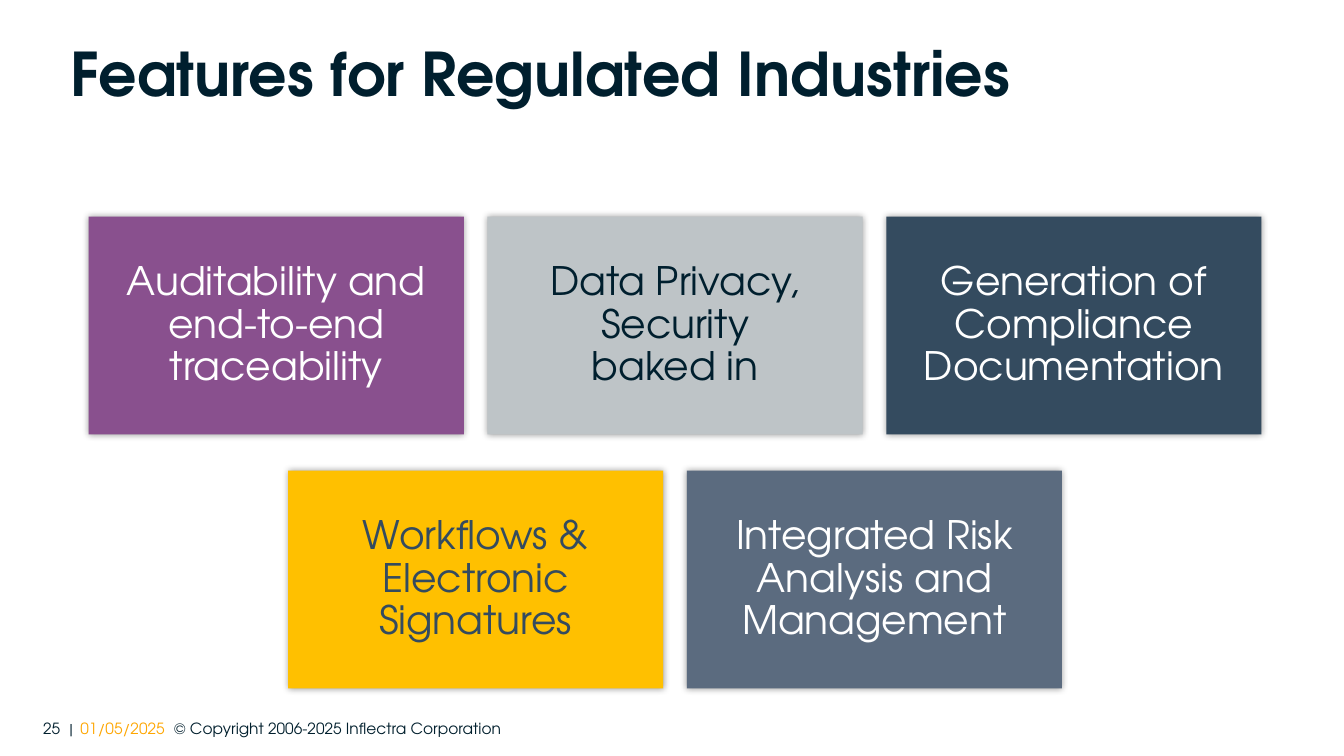
from lxml.etree import SubElement
from pptx import Presentation
from pptx.dml.color import RGBColor
from pptx.enum.shapes import MSO_SHAPE
from pptx.enum.text import MSO_ANCHOR, PP_ALIGN
from pptx.oxml.ns import qn
from pptx.util import Inches, Pt

FONT = "TeX Gyre Adventor"
TITLE = "Features for Regulated Industries"
FOOTER = [
    ("25\t|\t", "001F2D"),
    ("01/05/2025", "FEA601"),
    ("\t© Copyright 2006-2025 Inflectra Corporation", "001F2D"),
]
FOOTER_TABS = [0.26, 0.37, 1.3]
FEATURE_ROWS = [
    [
        ("Auditability and end-to-end traceability", "89508E", "FFFFFF"),
        ("Data Privacy, Security\vbaked in", "BEC4C7", "001F2E"),
        ("Generation of Compliance Documentation", "344B5F", "FFFFFF"),
    ],
    [
        ("Workflows & Electronic Signatures", "FFC000", "344B5F"),
        ("Integrated Risk Analysis and Management", "5B6B7F", "FFFFFF"),
    ],
]
CARD_WIDTH, CARD_HEIGHT = 3.72, 2.16
COLUMN_GAP, ROW_GAP = 0.235, 0.36
GRID_CENTER, GRID_TOP = 6.695, 2.15


def color(value):
    return RGBColor.from_string(value)


def style_run(run, size, value, bold=False):
    run.font.name = FONT
    run.font.size = Pt(size)
    run.font.bold = bold
    run.font.color.rgb = color(value)


def add_shadow(shape):
    shape.shadow.inherit = False
    effects = shape._element.spPr.find(qn("a:effectLst"))
    outer = SubElement(effects, qn("a:outerShdw"), blurRad=str(Pt(5)),
                       dist="0", dir="0", algn="ctr", rotWithShape="0")
    black = SubElement(outer, qn("a:srgbClr"), val="000000")
    SubElement(black, qn("a:alpha"), val="40000")


def add_title(slide):
    title = slide.shapes.add_textbox(Inches(0.6), Inches(0.34), Inches(11.5), Inches(0.84))
    frame = title.text_frame
    frame.word_wrap = True
    frame.vertical_anchor = MSO_ANCHOR.MIDDLE
    frame.text = TITLE
    frame.paragraphs[0].line_spacing = 0.9
    style_run(frame.paragraphs[0].runs[0], 43, "001F2E", True)


def add_footer(slide):
    footer = slide.shapes.add_textbox(Inches(0.33), Inches(7.08), Inches(6.67), Inches(0.29))
    footer.text_frame.word_wrap = True
    line = footer.text_frame.paragraphs[0]
    stops = SubElement(line._p.get_or_add_pPr(), qn("a:tabLst"))
    for position in FOOTER_TABS:
        SubElement(stops, qn("a:tab"), pos=str(Inches(position)), algn="l")
    for words, value in FOOTER:
        run = line.add_run()
        run.text = words
        style_run(run, 11, value)


def add_card(slide, left, top, words, fill, ink):
    card = slide.shapes.add_shape(MSO_SHAPE.RECTANGLE, Inches(left), Inches(top),
                                  Inches(CARD_WIDTH), Inches(CARD_HEIGHT))
    card.fill.solid()
    card.fill.fore_color.rgb = color(fill)
    card.line.fill.background()
    add_shadow(card)
    frame = card.text_frame
    frame.word_wrap = True
    frame.vertical_anchor = MSO_ANCHOR.MIDDLE
    frame.margin_left = frame.margin_right = Inches(0.12)
    frame.margin_top = frame.margin_bottom = Inches(0.12)
    frame.text = words
    paragraph = frame.paragraphs[0]
    paragraph.alignment = PP_ALIGN.CENTER
    paragraph.line_spacing = 0.9
    for run in paragraph.runs:
        style_run(run, 28, ink)


def main():
    deck = Presentation()
    deck.slide_width, deck.slide_height = Inches(13.33), Inches(7.5)
    slide = deck.slides.add_slide(deck.slide_layouts[6])
    add_footer(slide)
    add_title(slide)
    for row, features in enumerate(FEATURE_ROWS):
        row_width = len(features) * (CARD_WIDTH + COLUMN_GAP) - COLUMN_GAP
        top = GRID_TOP + row * (CARD_HEIGHT + ROW_GAP)
        for column, feature in enumerate(features):
            left = GRID_CENTER - row_width / 2 + column * (CARD_WIDTH + COLUMN_GAP)
            add_card(slide, left, top, *feature)
    deck.save("out.pptx")


if __name__ == "__main__":
    main()
